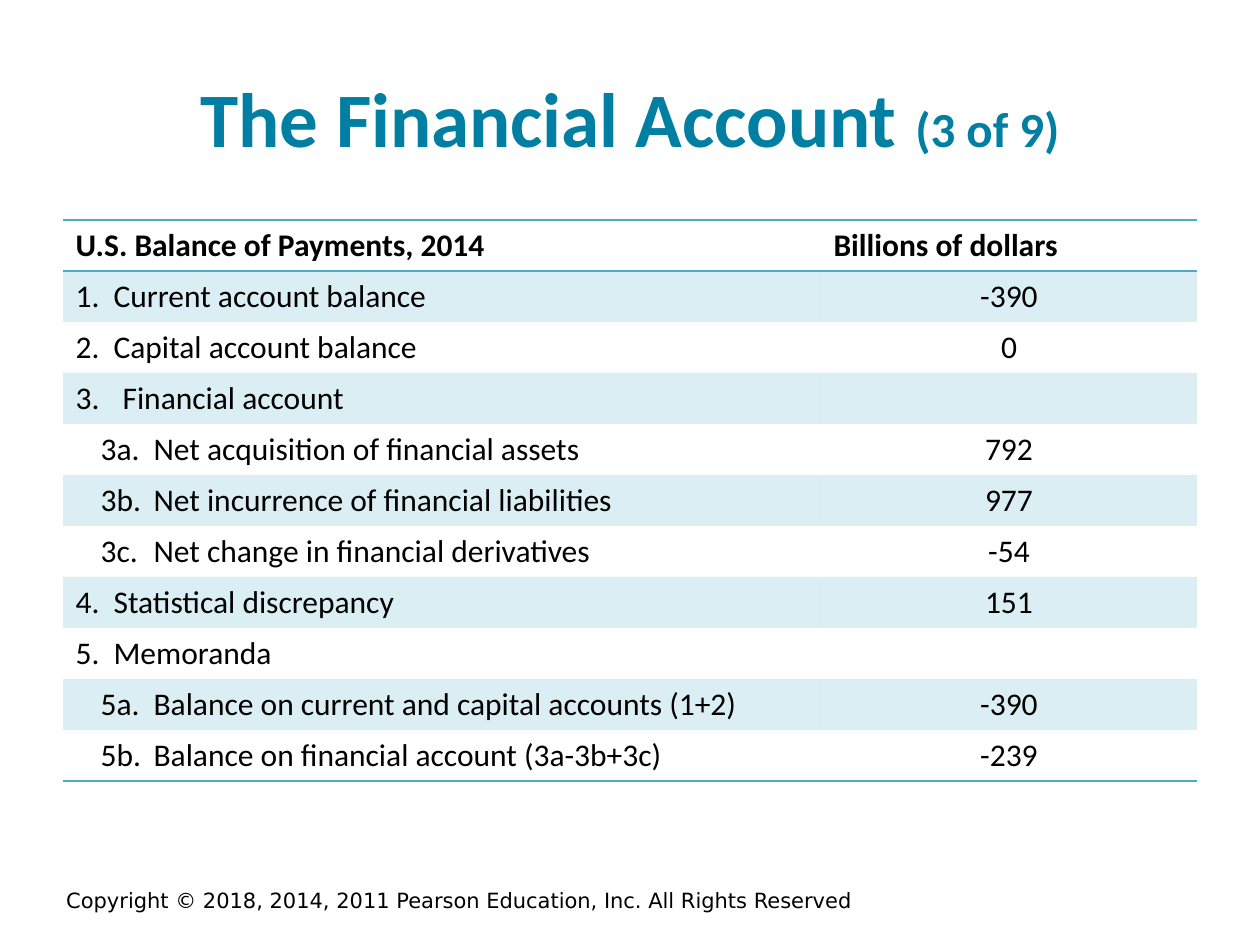
from lxml.etree import SubElement
from pptx import Presentation
from pptx.dml.color import RGBColor
from pptx.enum.text import MSO_ANCHOR as Anchor, PP_ALIGN as Align
from pptx.oxml.ns import qn
from pptx.util import Emu, Pt

TEAL, BLACK, ACCENT = "007FA3", "000000", "4BACC6"
NO_STYLE = "{2D5ABB26-0587-4C30-8999-92F81FD0307C}"
TITLE = [("The Financial Account ", 44), ("(3 of 9)", 28)]
COPYRIGHT = [("Copyright © 2018, 2014, 2011 Pearson Education, Inc. All Rights Reserved", 12)]
HEADER = ("U.S. Balance of Payments, 2014", "Billions of dollars")
ROWS = [
    ("1.\tCurrent account balance", "-390"),
    ("2.\tCapital account balance", "0"),
    ("Financial account", ""),
    ("3a.\tNet acquisition of financial assets", "792"),
    ("3b.\tNet incurrence of financial liabilities", "977"),
    ("3c.\tNet change in financial derivatives", "-54"),
    ("4.\tStatistical discrepancy", "151"),
    ("5.\tMemoranda", ""),
    ("5a.\tBalance on current and capital accounts (1+2)", "-390"),
    ("5b.\tBalance on financial account (3a-3b+3c)", "-239"),
]
COLUMNS, ROW_HEIGHT = (758, 376), 51
ITEM, AUTO_ITEM, SUB_ITEM = (38, -38), (47, -47), (78, -53)


def px(length):
    return Emu(round(length * 914400 / 126))


def style(font, size, color, bold=False, name="Calibri"):
    font.name, font.size, font.bold = name, Pt(size), bold
    font.color.rgb = RGBColor.from_string(color)


def add_line(slide, box, parts, color, bold, name):
    frame = slide.shapes.add_textbox(*map(px, box)).text_frame
    frame.word_wrap = True
    frame.vertical_anchor = Anchor.MIDDLE
    paragraph = frame.paragraphs[0]
    paragraph.alignment = Align.CENTER
    for text, size in parts:
        run = paragraph.add_run()
        run.text = text
        style(run.font, size, color, bold, name)


def add_border(cell, side):
    line = SubElement(cell._tc.get_or_add_tcPr(), qn(f"a:{side}"), w=str(Pt(1)))
    fill = SubElement(line, qn("a:solidFill"))
    SubElement(fill, qn("a:srgbClr"), val=ACCENT)


def fill_cell(cell, banded):
    if not banded:
        cell.fill.background()
        return
    cell.fill.solid()
    cell.fill.fore_color.rgb = RGBColor.from_string(ACCENT)
    color = cell._tc.tcPr.find(f".//{qn('a:srgbClr')}")
    SubElement(color, qn("a:alpha"), val="20000")


def indent_label(paragraph, text):
    number, tab, _ = text.partition("\t")
    if not tab:
        margin, indent = AUTO_ITEM
    else:
        margin, indent = SUB_ITEM if number[1].isalpha() else ITEM
    properties = paragraph._p.get_or_add_pPr()
    properties.set("marL", str(px(margin)))
    properties.set("indent", str(px(indent)))
    if not tab:
        SubElement(properties, qn("a:buFont"), typeface="+mj-lt")
        SubElement(properties, qn("a:buAutoNum"), type="arabicPeriod", startAt="3")


def add_balance_table(slide):
    content = [HEADER] + ROWS
    frame = slide.shapes.add_table(
        len(content), len(COLUMNS), px(63), px(220), px(sum(COLUMNS)), px(ROW_HEIGHT * len(content)))
    table = frame.table
    table.horz_banding = False
    table._tbl.tblPr.find(qn("a:tableStyleId")).text = NO_STYLE
    for column, width in zip(table.columns, COLUMNS):
        column.width = px(width)
    for row, texts in enumerate(content):
        table.rows[row].height = px(ROW_HEIGHT)
        for column, text in enumerate(texts):
            cell = table.cell(row, column)
            if row == 0:
                add_border(cell, "lnT")
            if row in (0, len(ROWS)):
                add_border(cell, "lnB")
            fill_cell(cell, row % 2 == 1)
            paragraph = cell.text_frame.paragraphs[0]
            paragraph.text = text
            if row and column == 0:
                indent_label(paragraph, text)
            elif row:
                paragraph.alignment = Align.CENTER
            style(paragraph.font, 18, BLACK, row == 0)


def main():
    """Build the balance of payments slide."""
    presentation = Presentation()
    presentation.slide_width, presentation.slide_height = px(1260), px(945)
    slide = presentation.slides.add_slide(presentation.slide_layouts[6])
    add_line(slide, (-18, 878, 955, 45), COPYRIGHT, BLACK, False, "DejaVu Sans")
    add_line(slide, (63, 38, 1134, 158), TITLE, TEAL, True, "Calibri")
    add_balance_table(slide)
    presentation.save("out.pptx")


if __name__ == "__main__":
    main()
